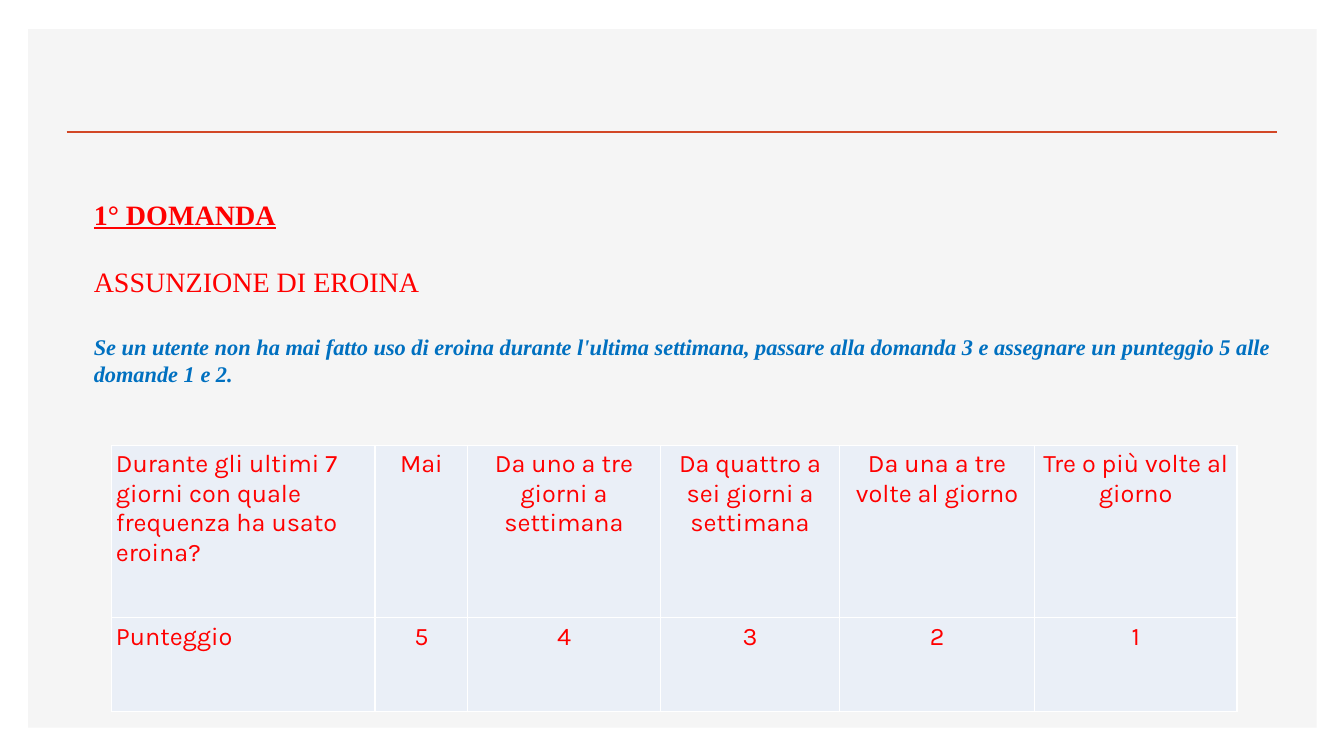
from lxml import etree
from pptx import Presentation
from pptx.dml.color import RGBColor
from pptx.enum.shapes import MSO_CONNECTOR, MSO_SHAPE
from pptx.enum.text import MSO_ANCHOR, MSO_AUTO_SIZE, PP_ALIGN
from pptx.oxml.ns import qn
from pptx.util import Inches, Pt

LEFT, CENTER = PP_ALIGN.LEFT, PP_ALIGN.CENTER
MIDDLE, TOP = MSO_ANCHOR.MIDDLE, MSO_ANCHOR.TOP
NO_AUTOFIT = MSO_AUTO_SIZE.NONE
RECTANGLE, STRAIGHT = MSO_SHAPE.RECTANGLE, MSO_CONNECTOR.STRAIGHT

THEME = {
    "panel": "F5F5F5", "rule": "D24726", "cell": "EAEFF7", "border": "FFFFFF",
    "question": "FF0000", "instruction": "0070C0",
    "heading_font": "Times New Roman", "table_font": "Karla",
    "heading_size": 20, "instruction_size": 16, "table_size": 18,
    "paragraph_gap": 24.5, "rule_width": 2, "border_width": 1,
}


def rgb(name):
    return RGBColor.from_string(THEME[name])


def write(paragraph, text, font="table_font", size="table_size", color="question",
          align=LEFT, gap=0, bold=False, italic=False, underline=False):
    paragraph.alignment = align
    paragraph.space_before = Pt(gap)
    run = paragraph.add_run()
    run.text = text
    run.font.name = THEME[font]
    run.font.size = Pt(THEME[size])
    run.font.color.rgb = rgb(color)
    run.font.bold, run.font.italic, run.font.underline = bold, italic, underline


deck = Presentation()
deck.slide_width, deck.slide_height = Inches(13.33), Inches(7.5)
slide = deck.slides.add_slide(deck.slide_layouts[5])

# Background panel
panel = slide.shapes.add_shape(RECTANGLE, Inches(0.28), Inches(0.29), Inches(12.78), Inches(6.93))
panel.shadow.inherit = False
panel.fill.solid()
panel.fill.fore_color.rgb = rgb("panel")
panel.line.fill.background()

# Header rule
rule = slide.shapes.add_connector(STRAIGHT, Inches(0.66), Inches(1.31), Inches(12.67), Inches(1.31))
rule.line.color.rgb = rgb("rule")
rule.line.width = Pt(THEME["rule_width"])
etree.SubElement(rule.element.spPr, qn("a:effectLst"))

# Answer table
answers = [
    ("Durante gli ultimi 7 giorni con quale frequenza ha usato eroina?", "Punteggio"),
    ("Mai", "5"),
    ("Da uno a tre giorni a settimana", "4"),
    ("Da quattro a sei giorni a settimana", "3"),
    ("Da una a tre volte al giorno", "2"),
    ("Tre o più volte al giorno", "1"),
]
column_widths = [2.61, 0.92, 1.91, 1.78, 1.93, 2.01]
row_heights = [1.71, 0.93]
scores = slide.shapes.add_table(
    len(row_heights), len(column_widths), Inches(1.11), Inches(4.42),
    Inches(sum(column_widths)), Inches(sum(row_heights))).table
scores.first_row = scores.horz_banding = False
for row, height in zip(scores.rows, row_heights):
    row.height = Inches(height)

for column, (width, texts) in enumerate(zip(column_widths, answers)):
    scores.columns[column].width = Inches(width)
    for row, text in enumerate(texts):
        cell = scores.cell(row, column)
        cell.margin_left = cell.margin_right = Inches(0.04)
        cell.margin_top = cell.margin_bottom = Inches(0.04)
        cell.vertical_anchor = TOP
        write(cell.text_frame.paragraphs[0], text, align=CENTER if column else LEFT)
        # Borders come before the fill in the cell's properties
        for side in ("a:lnL", "a:lnR", "a:lnT", "a:lnB"):
            border = etree.SubElement(cell._tc.get_or_add_tcPr(), qn(side),
                                      w=str(Pt(THEME["border_width"])))
            border_fill = etree.SubElement(border, qn("a:solidFill"))
            etree.SubElement(border_fill, qn("a:srgbClr"), val=THEME["border"])
        cell.fill.solid()
        cell.fill.fore_color.rgb = rgb("cell")

# Question heading, in front of the panel
question = slide.shapes.title
question.element.getparent().append(question.element)
question.left, question.top = Inches(0.83), Inches(1.87)
question.width, question.height = Inches(12.23), Inches(2.05)
heading = question.text_frame
heading.word_wrap = True
heading.auto_size = NO_AUTOFIT
heading.vertical_anchor = MIDDLE
write(heading.paragraphs[0], "1° DOMANDA", font="heading_font", size="heading_size",
      bold=True, underline=True)
write(heading.add_paragraph(), "ASSUNZIONE DI EROINA", font="heading_font",
      size="heading_size", gap=THEME["paragraph_gap"])
write(heading.add_paragraph(),
      "Se un utente non ha mai fatto uso di eroina durante l'ultima settimana, passare alla "
      "domanda 3 e assegnare un punteggio 5 alle domande 1 e 2.",
      font="heading_font", size="instruction_size", color="instruction",
      gap=THEME["paragraph_gap"], bold=True, italic=True)

deck.save("out.pptx")
